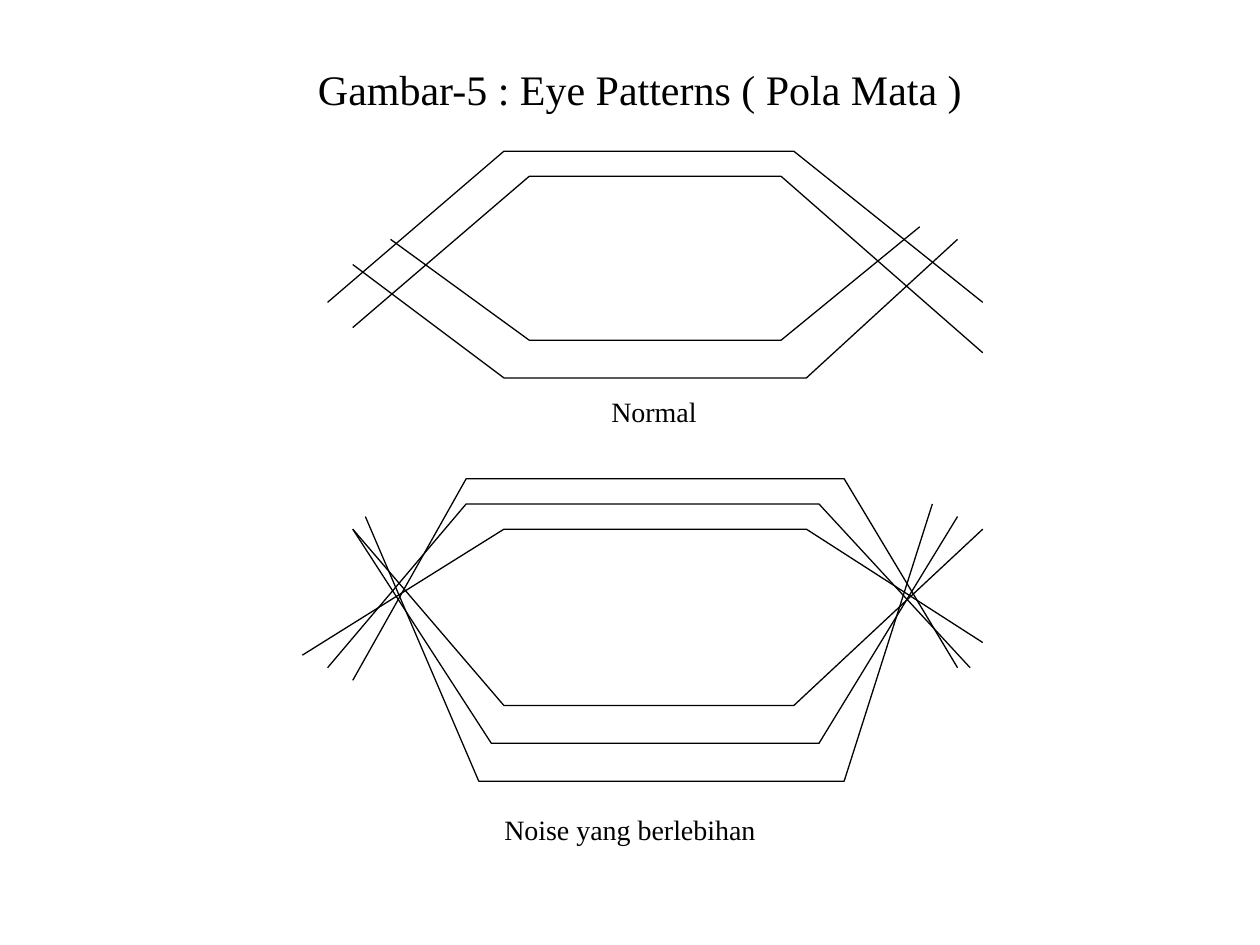
from pptx import Presentation, util as u
from pptx.dml.color import RGBColor
from pptx.enum import text

# The page is a grid of 100 columns by 75 rows of square cells
COLUMNS, ROWS = 100, 75
CELL = u.Inches(0.1)
INK = "000000"

# Each trace: start, flat part (left, right, row), end; relative to its eye's box
NORMAL_TRACES = [
    ((0.8, 13), (15.3, 37.9, 0.7), (53.5, 13.4)),
    ((2.5, 15), (16.5, 36.5, 3.2), (52.7, 16.7)),
    ((5.8, 8), (16.5, 37.3, 16.3), (48.1, 7.3)),
    ((3.3, 9.8), (15.4, 38.5, 18.8), (50.8, 8.2)),
]
NOISY_TRACES = [
    ((3.5, 16.2), (12.7, 42.7, 0.3), (51.8, 15.3)),
    ((1.8, 15.3), (13.1, 41.4, 2), (53.3, 14.9)),
    ((0.2, 13.7), (16, 40.2, 3.7), (54.3, 12.8)),
    ((5.4, 2.8), (14.1, 42.9, 23.7), (50.2, 2)),
    ((3.5, 4.5), (16.4, 39.3, 18.2), (53.5, 3.7)),
    ((4.3, 3.7), (15.4, 41.2, 21.4), (51.8, 2.8)),
]


def color(value):
    return RGBColor.from_string(value)


def add_label(page, box, words, size, wrap):
    """Centred text in a box given in grid cells."""
    label = page.shapes.add_textbox(*(int(length * CELL) for length in box))
    frame = label.text_frame
    frame_format = {"word_wrap": wrap, "vertical_anchor": text.MSO_ANCHOR.MIDDLE}
    for name, value in frame_format.items():
        setattr(frame, name, value)
    para = frame.paragraphs[0]
    para.alignment = text.PP_ALIGN.CENTER
    span = para.add_run()
    span.text = words
    for name, value in {"name": "Times New Roman", "size": u.Pt(size)}.items():
        setattr(span.font, name, value)
    span.font.color.rgb = color(INK)


def add_trace(page, points):
    """Open, unfilled signal line through the points."""
    builder = page.shapes.build_freeform(*points[0], scale=CELL)
    builder.add_line_segments(points[1:], close=False)
    trace = builder.convert_to_shape()
    trace.shadow.inherit = False
    trace.fill.background()
    trace.line.color.rgb = color(INK)
    trace.line.width = u.Pt(0.75)


def add_eye(page, box, traces, caption, caption_box):
    """Eye pattern with its caption, both placed from the box's corner."""
    left, top = box
    for start, (flat_left, flat_right, flat_row), end in traces:
        points = [start, (flat_left, flat_row), (flat_right, flat_row), end]
        add_trace(page, [(left + x, top + y) for x, y in points])
    x, y, width, height = caption_box
    add_label(page, (left + x, top + y, width, height), caption, 16, False)


def main():
    deck = Presentation()
    deck.slide_width, deck.slide_height = COLUMNS * CELL, ROWS * CELL
    page = deck.slides.add_slide(deck.slide_layouts[6])

    # Title
    add_label(page, (8.3, 0.8, 85, 12.5),
              "Gambar-5 : Eye Patterns ( Pola Mata )", 24, True)

    # Clean signal above, noisy signal below
    add_eye(page, (25, 11), NORMAL_TRACES, "Normal", (22.5, 19.8, 8.8, 3.7))
    add_eye(page, (24, 38), NOISY_TRACES, "Noise yang berlebihan",
            (15, 26, 22, 3.7))

    deck.save("out.pptx")


if __name__ == "__main__":
    main()
